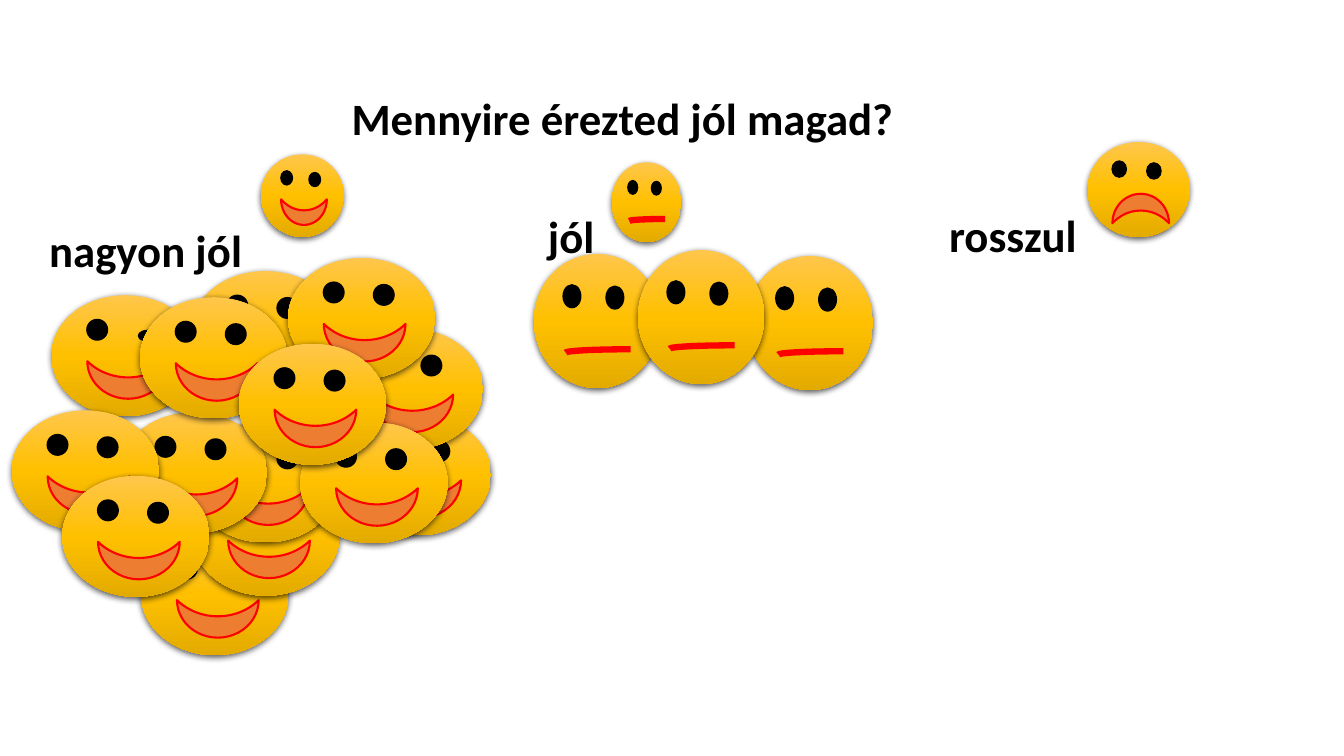
from dataclasses import dataclass

from lxml import etree
from pptx import Presentation
from pptx.dml.color import RGBColor
from pptx.enum.shapes import MSO_SHAPE
from pptx.enum.text import MSO_AUTO_SIZE
from pptx.oxml import parse_xml
from pptx.oxml.ns import nsdecls, qn
from pptx.util import Cm, Pt

OVAL, MOON, ARC = MSO_SHAPE.OVAL, MSO_SHAPE.MOON, MSO_SHAPE.ARC
GROW = MSO_AUTO_SIZE.SHAPE_TO_FIT_TEXT

LABELS = [
    ("Mennyire érezted jól magad?", 8.61, 2.16, 14.3),
    ("nagyon jól", 0.99, 5.49, 5.41),
    ("jól", 13.56, 5.13, 1.7),
    ("rosszul", 23.67, 5.11, 3.76),
]
KEYS = [
    ("flat", 15.42, 4.09, 1.75, 2.01),
    ("glad", 6.58, 3.89, 2.08, 2.08),
    ("sad", 27.41, 3.58, 2.57, 2.39),
]
# Votes are listed from back to front.
GLAD = [
    (3.56, 13.46), (1.3, 7.44), (4.85, 11.96), (4.83, 6.83), (4.83, 10.62),
    (3.02, 10.39), (0.3, 10.34), (3.53, 7.49), (8.66, 10.44), (1.57, 11.99),
    (8.46, 8.28), (7.26, 6.5), (7.57, 10.64), (6.02, 8.66),
]
FLAT = [(13.46, 6.4), (18.82, 6.45), (16.08, 6.3)]
SQUINT = GLAD[1]

# Eye places and sizes are shares of the face.
EYES = {
    "glad": [(0.24, 0.2, 0.14, 0.17), (0.58, 0.22, 0.14, 0.17)],
    "flat": [(0.23, 0.23, 0.14, 0.17), (0.57, 0.24, 0.14, 0.17)],
    "squint": [(0.24, 0.2, 0.14, 0.17), (0.59, 0.29, 0.13, 0.09)],
}
EYES["sad"] = EYES["glad"]
TURN = {"glad": 270, "squint": 270, "sad": 90}


@dataclass
class Theme:
    font: str = "Calibri"
    size: int = 32
    ink: str = "000000"
    skin: tuple = ((0, "FFC64B"), (50, "FFC000"), (100, "E3AB00"))
    lips: str = "FF0000"
    mouth: str = "ED7D31"
    eye_line: float = 1
    lip_line: float = 1.5
    flat_line: float = 4.5


class Board:
    def __init__(self, slide, theme):
        self.slide = slide
        self.theme = theme

    def text(self, words, *, x, y, w, h=1.63, bold=True):
        box = self.slide.shapes.add_textbox(Cm(x), Cm(y), Cm(w), Cm(h))
        frame = box.text_frame
        frame.word_wrap = False
        frame.auto_size = GROW
        run = frame.paragraphs[0].add_run()
        run.text = words
        font = run.font
        font.name, font.size, font.bold = self.theme.font, Pt(self.theme.size), bold
        font.color.rgb = RGBColor.from_string(self.theme.ink)

    def shape(self, group, kind, x, y, w, h, fill=None, line=None, width=1):
        item = group.shapes.add_shape(kind, Cm(x), Cm(y), Cm(w), Cm(h))
        item.shadow.inherit = False
        if fill:
            item.fill.solid()
            item.fill.fore_color.rgb = RGBColor.from_string(fill)
        else:
            item.fill.background()
        if line:
            item.line.color.rgb = RGBColor.from_string(line)
            item.line.width = Pt(width)
        else:
            item.line.fill.background()
        return item

    def head(self, group, x, y, w, h):
        """Add the shaded round head with its soft shadow."""
        item = self.shape(group, OVAL, x, y, w, h)
        props = item._element.spPr
        stops = "".join(
            f'<a:gs pos="{pos * 1000}"><a:srgbClr val="{tone}"/></a:gs>'
            for pos, tone in self.theme.skin)
        blend = parse_xml(
            f'<a:gradFill {nsdecls("a")} rotWithShape="1"><a:gsLst>{stops}</a:gsLst>'
            '<a:lin ang="5400000" scaled="0"/></a:gradFill>')
        props.replace(props.find(qn("a:noFill")), blend)
        cast = etree.SubElement(
            props.find(qn("a:effectLst")), qn("a:outerShdw"),
            blurRad=str(Pt(4.5)), dist=str(Pt(1.5)), dir="5400000",
            algn="ctr", rotWithShape="0")
        tone = etree.SubElement(cast, qn("a:srgbClr"), val=self.theme.ink)
        etree.SubElement(tone, qn("a:alpha"), val="63000")

    def face(self, mood, x, y, w, h):
        theme = self.theme
        group = self.slide.shapes.add_group_shape()
        self.head(group, x, y, w, h)
        for ex, ey, ew, eh in EYES[mood]:
            self.shape(group, OVAL, x + ex * w, y + ey * h, ew * w, eh * h,
                       theme.ink, theme.ink, theme.eye_line)
        if mood == "flat":
            lips = self.shape(group, ARC, x + 0.25 * w, y + 0.71 * h, 1.03 * w, 0.05 * h,
                              line=theme.lips, width=theme.flat_line)
            lips.rotation = 180
            lips._element.spPr.find(qn("a:xfrm")).set("flipV", "1")
        else:
            # The moon lies on its side, so its width is the mouth's height.
            mw, mh = 0.31 * h, 0.555 * w
            lips = self.shape(group, MOON, x + 0.52 * w - mw / 2, y + 0.7 * h - mh / 2,
                              mw, mh, theme.mouth, theme.lips, theme.lip_line)
            lips.adjustments[0] = 0.569
            lips.rotation = TURN[mood]


def main():
    deck = Presentation()
    deck.slide_width, deck.slide_height = Cm(33.87), Cm(19.05)
    board = Board(deck.slides.add_slide(deck.slide_layouts[6]), Theme())
    for words, x, y, w in LABELS:
        board.text(words, x=x, y=y, w=w)
    for key in KEYS:
        board.face(*key)
    for spot in GLAD:
        board.face("squint" if spot == SQUINT else "glad", *spot, 3.71, 3.05)
    for spot in FLAT:
        board.face("flat", *spot, 3.18, 3.38)
    deck.save("out.pptx")


if __name__ == "__main__":
    main()
